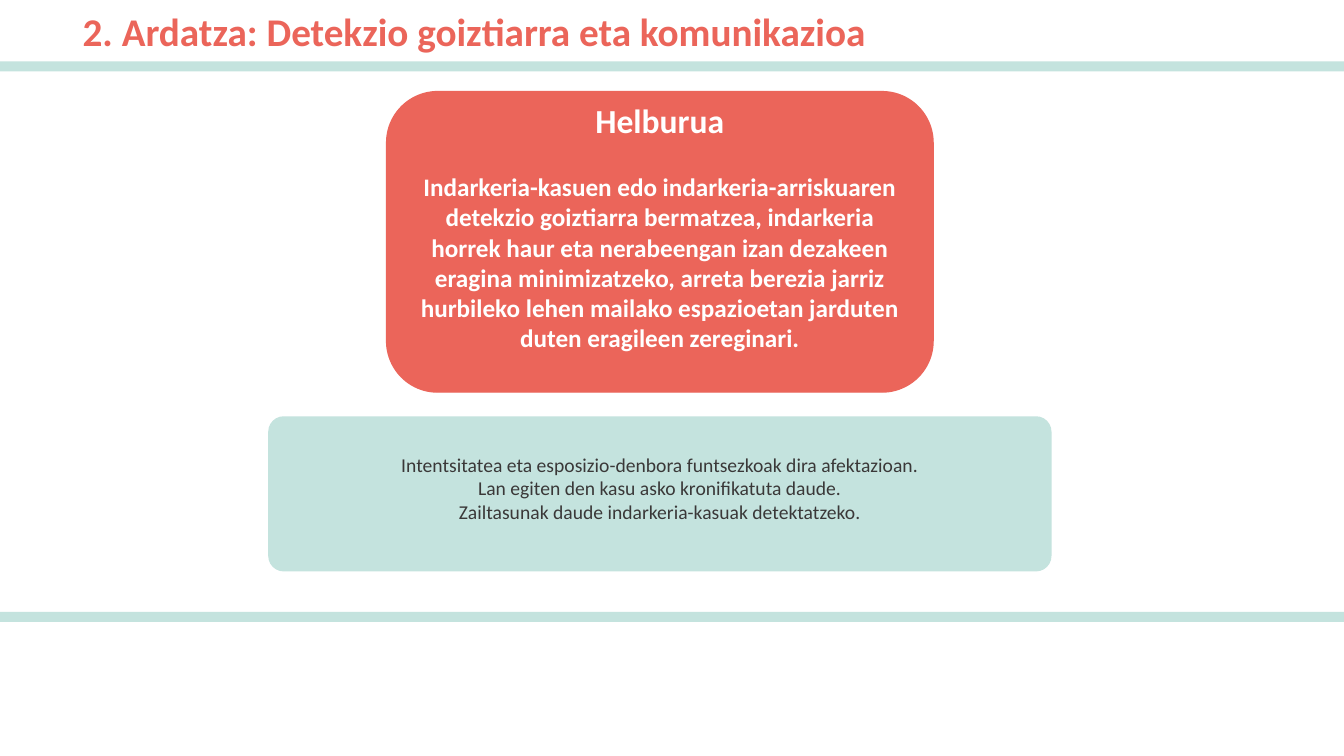
from pptx import Presentation
from pptx.dml.color import RGBColor
from pptx.enum.shapes import MSO_SHAPE as SHAPE
from pptx.enum.text import MSO_ANCHOR as ANCHOR, PP_ALIGN as ALIGN
from pptx.util import Cm, Pt

TITLE = "2. Ardatza: Detekzio goiztiarra eta komunikazioa"
GOAL_HEAD = "Helburua"
GOAL = (
    "Indarkeria-kasuen edo indarkeria-arriskuaren detekzio goiztiarra bermatzea, "
    "indarkeria horrek haur eta nerabeengan izan dezakeen eragina minimizatzeko, "
    "arreta berezia jarriz hurbileko lehen mailako espazioetan jarduten duten "
    "eragileen zereginari."
)
FINDINGS = [
    "Intentsitatea eta esposizio-denbora funtsezkoak dira afektazioan.",
    "Lan egiten den kasu asko kronifikatuta daude.",
    "Zailtasunak daude indarkeria-kasuak detektatzeko.",
]
COLORS = {"coral": "EB655A", "mint": "C4E3DE", "dark": "3A3838", "white": "FFFFFF"}
FONT = "Calibri"
SLIDE_W, SLIDE_H = 33.87, 19.05
BAR_TOPS, BAR_H = (1.55, 15.42), 0.25
CENTER_X = 16.63


def color(name):
    return RGBColor.from_string(COLORS[name])


def add_block(s, kind, box, fill):
    sp = s.shapes.add_shape(kind, *map(Cm, box))
    sp.shadow.inherit = False
    sp.fill.solid()
    sp.fill.fore_color.rgb = color(fill)
    sp.line.fill.background()
    return sp


def add_card(s, top, width, height, fill, corner, bottom_inset):
    """Add a rounded box centred on the content axis."""
    box = (CENTER_X - width / 2, top, width, height)
    sp = add_block(s, SHAPE.ROUNDED_RECTANGLE, box, fill)
    sp.adjustments[0] = corner
    tf = sp.text_frame
    tf.word_wrap = True
    tf.vertical_anchor = ANCHOR.MIDDLE
    tf.margin_bottom = Cm(bottom_inset)
    return sp


def write(p, text, size, ink, bold=False, align=ALIGN.CENTER, before=0):
    p.text = text
    p.alignment = align
    if before:
        p.space_before = Pt(before)
    font = p.font
    font.name, font.size, font.bold = FONT, Pt(size), bold
    font.color.rgb = color(ink)


def main():
    prs = Presentation()
    prs.slide_width, prs.slide_height = Cm(SLIDE_W), Cm(SLIDE_H)
    s = prs.slides.add_slide(prs.slide_layouts[5])

    for top in BAR_TOPS:
        add_block(s, SHAPE.RECTANGLE, (0, top, SLIDE_W, BAR_H), "mint")

    title = s.shapes.title
    title.left, title.top, title.width, title.height = map(Cm, (1.83, 0, 31, 1.55))
    title.text_frame.vertical_anchor = ANCHOR.MIDDLE
    write(title.text_frame.paragraphs[0], TITLE, 28, "coral", True, ALIGN.LEFT)

    findings = add_card(s, 10.49, 19.74, 3.91, "mint", 0.1, 0.43)
    tf = findings.text_frame
    for i, line in enumerate(FINDINGS):
        write(tf.paragraphs[0] if i == 0 else tf.add_paragraph(), line, 14, "dark")

    goal = add_card(s, 2.31, 13.77, 7.57, "coral", 0.17, 0.89)
    goal.line.color.rgb = color("coral")
    goal.line.width = Pt(1)
    tf = goal.text_frame
    write(tf.paragraphs[0], GOAL_HEAD, 24, "white", True)
    write(tf.add_paragraph(), GOAL, 18, "white", True, before=22)

    prs.save("out.pptx")


if __name__ == "__main__":
    main()
